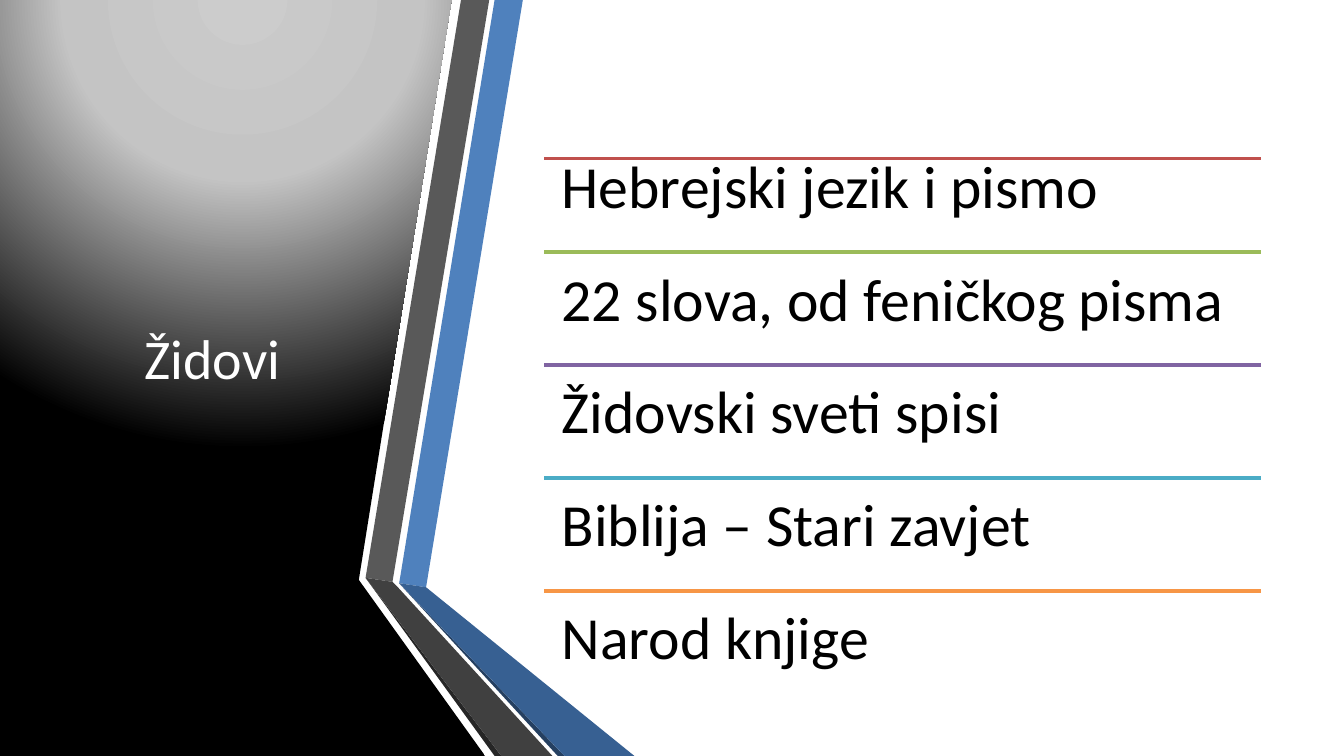
from lxml.etree import SubElement
from pptx import Presentation
from pptx.dml.color import RGBColor
from pptx.enum.shapes import MSO_CONNECTOR
from pptx.enum.text import MSO_ANCHOR, MSO_AUTO_SIZE, PP_ALIGN
from pptx.oxml import parse_xml
from pptx.oxml.ns import nsdecls, qn
from pptx.util import Emu, Pt

SCALE = 4572  # EMU per px, 200 px to the inch
WIDTH, HEIGHT = 2000, 1125
FONT = "Calibri"

PANEL = [(528, 0), (672, 0), (534, 863), (722, HEIGHT), (0, HEIGHT), (0, 0)]
PANEL_STOPS = [(0, "CCCCCC"), (40, "C4C4C4"), (100, "000000")]

# Ribbon pieces from back to front
RIBBONS = [
    ("4F81BD", [(594, 868), (634, 874), (778, 0), (736, 0)]),
    ("595959", [(728, 0), (686, 0), (544, 860), (584, 866)]),
    ("262626", [(544, 860), (736, HEIGHT), (746, HEIGHT)]),
    ("254061", [(594, 868), (830, HEIGHT), (840, HEIGHT)]),
    ("376092", [(594, 868), (840, HEIGHT), (944, HEIGHT), (634, 874)]),
    ("404040", [(822, HEIGHT), (592, 874), (584, 866), (544, 860), (746, HEIGHT)]),
]

TOPICS = [
    ("Hebrejski jezik i pismo", "C0504D"),
    ("22 slova, od feničkog pisma", "9BBB59"),
    ("Židovski sveti spisi", "8064A2"),
    ("Biblija – Stari zavjet", "4BACC6"),
    ("Narod knjige", "F79646"),
]
LIST_LEFT, LIST_TOP, LIST_WIDTH, ROW_HEIGHT = 810, 207, 1066, 168
FIRST_RULE_TOP = 236  # the first rule sits inside its row
INSET = 26


def px(length):
    return Emu(length * SCALE)


def color(hex_code):
    return RGBColor.from_string(hex_code)


def set_text(frame, text, size, hex_code, align=PP_ALIGN.LEFT,
             anchor=MSO_ANCHOR.TOP, line_spacing=None):
    frame.word_wrap = True
    frame.auto_size = MSO_AUTO_SIZE.NONE
    frame.vertical_anchor = anchor
    para = frame.paragraphs[0]
    para.alignment = align
    para.line_spacing = line_spacing
    span = para.add_run()
    span.text = text
    span.font.name = FONT
    span.font.size = Pt(size)
    span.font.color.rgb = color(hex_code)


def add_polygon(shapes, points, hex_code):
    builder = shapes.build_freeform(*points[0], scale=SCALE)
    builder.add_line_segments(points[1:], close=True)
    polygon = builder.convert_to_shape()
    polygon.shadow.inherit = False
    polygon.line.fill.background()
    polygon.fill.solid()
    polygon.fill.fore_color.rgb = color(hex_code)
    return polygon


def set_radial_fill(shape, stops):
    stop_xml = "".join(
        f'<a:gs pos="{percent * 1000}"><a:srgbClr val="{hex_code}"/></a:gs>'
        for percent, hex_code in stops)
    gradient = parse_xml(
        f'<a:gradFill {nsdecls("a")} rotWithShape="1"><a:gsLst>{stop_xml}</a:gsLst>'
        '<a:path path="circle">'
        '<a:fillToRect l="50000" t="-80000" r="50000" b="180000"/>'
        '</a:path></a:gradFill>')
    properties = shape._element.spPr
    properties.replace(properties.find(qn("a:solidFill")), gradient)


def add_rule(shapes, top, hex_code):
    rule = shapes.add_connector(MSO_CONNECTOR.STRAIGHT, px(LIST_LEFT), px(top),
                                px(LIST_LEFT + LIST_WIDTH), px(top))
    rule.line.color.rgb = color(hex_code)
    rule.line.width = Pt(2)
    SubElement(rule._element.spPr, qn("a:effectLst"))


def add_topic(shapes, top, text):
    box = shapes.add_textbox(px(LIST_LEFT), px(top), px(LIST_WIDTH), px(ROW_HEIGHT))
    frame = box.text_frame
    frame.margin_left = frame.margin_right = px(INSET)
    frame.margin_top = frame.margin_bottom = px(INSET)
    set_text(frame, text, size=32, hex_code="000000", line_spacing=0.9)


def place_title(slide, text):
    title = slide.shapes.title
    title.left, title.top, title.width, title.height = map(px, (88, 112, 456, 838))
    set_text(title.text_frame, text, size=30, hex_code="FFFFFF",
             align=PP_ALIGN.CENTER, anchor=MSO_ANCHOR.MIDDLE)
    # Bring the title in front of the panel
    slide.shapes._spTree.append(title._element)


def main():
    deck = Presentation()
    deck.slide_width, deck.slide_height = px(WIDTH), px(HEIGHT)
    page = deck.slides.add_slide(deck.slide_layouts[5])
    page.background.fill.solid()
    page.background.fill.fore_color.rgb = color("FFFFFF")

    # Dark panel and folded ribbons
    panel = add_polygon(page.shapes, PANEL, "000000")
    set_radial_fill(panel, PANEL_STOPS)
    ribbons = page.shapes.add_group_shape().shapes
    for hex_code, points in RIBBONS:
        add_polygon(ribbons, points, hex_code)

    place_title(page, "Židovi")

    # Ruled list of topics
    topics = page.shapes.add_group_shape().shapes
    for row, (text, hex_code) in enumerate(TOPICS):
        top = LIST_TOP + row * ROW_HEIGHT
        add_rule(topics, max(top, FIRST_RULE_TOP), hex_code)
        add_topic(topics, top, text)

    deck.save("out.pptx")


if __name__ == "__main__":
    main()
